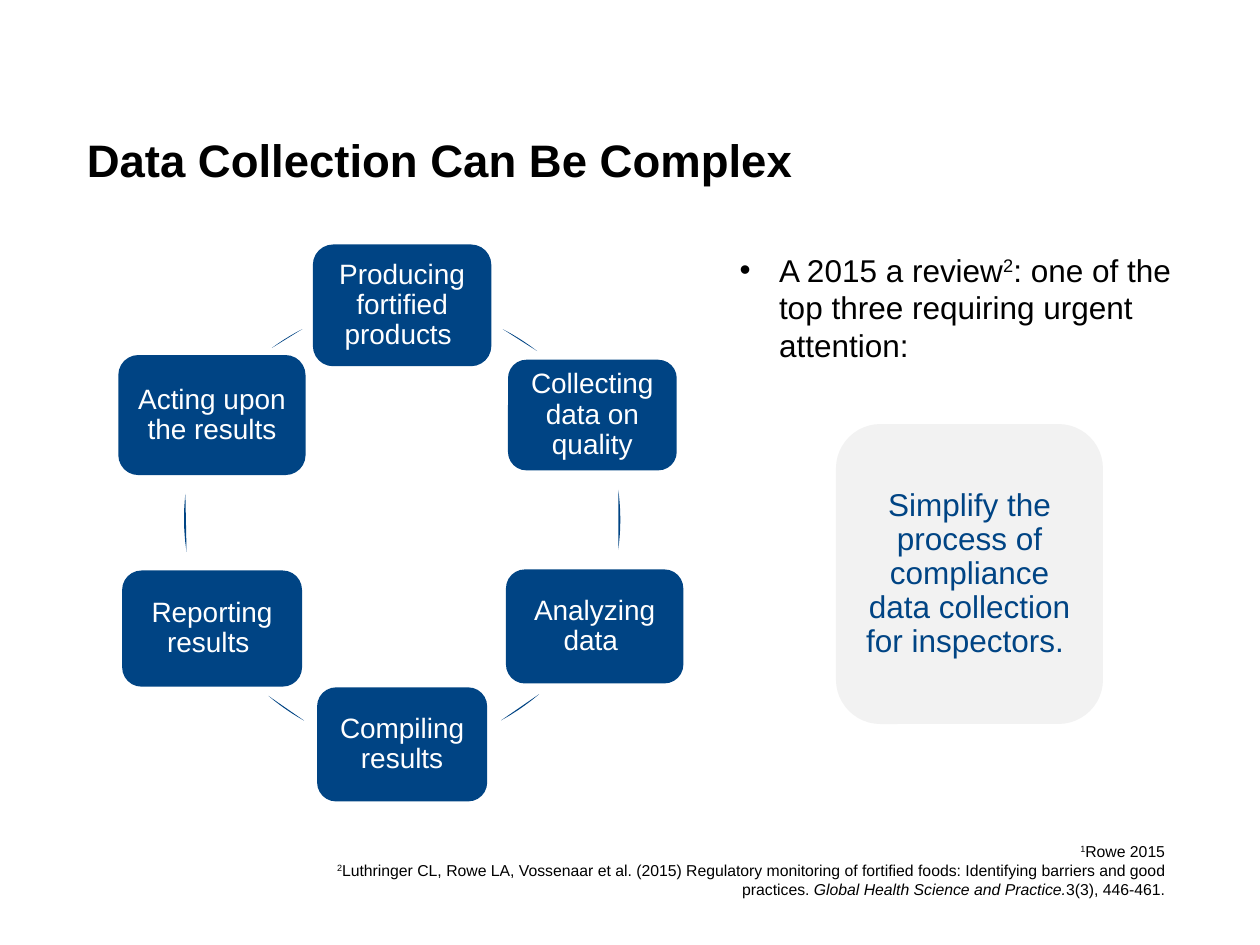
from math import cos, radians, sin

from lxml import etree
from pptx import Presentation
from pptx.dml.color import RGBColor
from pptx.enum.shapes import MSO_SHAPE
from pptx.enum.text import MSO_ANCHOR, PP_ALIGN
from pptx.oxml.ns import qn
from pptx.util import Pt

NAVY = RGBColor(0x00, 0x44, 0x84)
PALE = RGBColor(0xF2, 0xF2, 0xF2)
BLACK = RGBColor(0x00, 0x00, 0x00)
WHITE = RGBColor(0xFF, 0xFF, 0xFF)
ROUNDED = MSO_SHAPE.ROUNDED_RECTANGLE
MIDDLE = MSO_ANCHOR.MIDDLE
TOP = MSO_ANCHOR.TOP
CENTER = PP_ALIGN.CENTER
RIGHT = PP_ALIGN.RIGHT

ARC_RADIUS = 125.6
ARC_STEPS = 12
STEPS = [
    ("Producing fortified products ", (111.8, 0.7, 102, 69.6)),
    ("Collecting data on quality", (223.3, 66.6, 96.4, 63.2)),
    ("Analyzing data ", (222.1, 186.4, 101.4, 65.2)),
    ("Compiling results", (114.2, 253.8, 97.2, 65.2)),
    ("Reporting results ", (2.8, 187, 102.8, 66.4)),
    ("Acting upon the results", (0.6, 63.9, 107, 68.6)),
]
ARCS = [
    ((163, 160.9), -62.8, -52.2),
    ((161.9, 158), -7.8, 7.8),
    ((159.4, 162.3), 49.4, 61.5),
    ((167.8, 163), 119, 130.4),
    ((163.8, 157.3), 171.3, 186.4),
    ((163, 160.9), 233.6, 242.9),
]


def set_all(target, values):
    for name, value in values.items():
        setattr(target, name, value)


def prepare_frame(shape, anchor, inset_x, inset_y):
    set_all(shape.text_frame, {
        "word_wrap": True,
        "vertical_anchor": anchor,
        "margin_left": Pt(inset_x),
        "margin_right": Pt(inset_x),
        "margin_top": Pt(inset_y),
        "margin_bottom": Pt(inset_y),
    })
    return shape.text_frame


def add_spans(para, spans, size, color):
    for text, style in spans:
        span = para.add_run()
        span.text = text
        set_all(span.font, {"name": "Arial", "size": Pt(size),
                            "bold": style == "bold", "italic": style == "italic"})
        span.font.color.rgb = color
        if style == "super":
            span.font._element.set("baseline", "30000")


def paint(shape, color):
    shape.shadow.inherit = False
    shape.fill.solid()
    shape.fill.fore_color.rgb = color
    shape.line.fill.background()


def add_text_box(page, box, anchor=TOP):
    shape = page.shapes.add_textbox(*map(Pt, box))
    return prepare_frame(shape, anchor, 7.2, 3.6)


def add_card(page, box, text, size, fill, color, inset):
    card = page.shapes.add_shape(ROUNDED, *map(Pt, box))
    paint(card, fill)
    para = prepare_frame(card, MIDDLE, inset, inset).paragraphs[0]
    set_all(para, {"alignment": CENTER, "line_spacing": 0.9})
    add_spans(para, [(text, None)], size, color)


def add_arc(page, center_x, center_y, start, end):
    points = []
    for step in range(ARC_STEPS + 1):
        angle = radians(start + (end - start) * step / ARC_STEPS)
        points.append((Pt(center_x + ARC_RADIUS * cos(angle)),
                       Pt(center_y + ARC_RADIUS * sin(angle))))
    builder = page.shapes.build_freeform(Pt(center_x - ARC_RADIUS),
                                         Pt(center_y - ARC_RADIUS))
    builder.move_to(*points[0])
    builder.add_line_segments(points[1:], close=False)
    builder.move_to(Pt(center_x + ARC_RADIUS), Pt(center_y + ARC_RADIUS))
    arc = builder.convert_to_shape()
    first_corner, _, last_corner = list(arc._element.iter(qn("a:moveTo")))
    for corner in (first_corner, last_corner):
        corner.getparent().remove(corner)
    paint(arc, NAVY)


def add_title(page, box):
    para = add_text_box(page, box, MIDDLE).paragraphs[0]
    para.line_spacing = 0.9
    add_spans(para, [("Data Collection Can Be Complex", "bold")], 26, BLACK)


def add_cycle(page, left, top):
    for (center_x, center_y), start, end in ARCS:
        add_arc(page, left + center_x, top + center_y, start, end)
    for text, (x, y, width, height) in STEPS:
        add_card(page, (left + x, top + y, width, height), text, 16, NAVY, WHITE, 4.8)


def add_review(page, left, top, width):
    para = add_text_box(page, (left, top, width, 94.3)).paragraphs[0]
    properties = para._p.get_or_add_pPr()
    properties.set("marL", str(Pt(22.5)))
    properties.set("indent", str(-Pt(22.5)))
    etree.SubElement(properties, qn("a:buFont")).set("typeface", "Arial")
    etree.SubElement(properties, qn("a:buChar")).set("char", "•")
    add_spans(para, [
        ("A 2015 a review", None),
        ("2", "super"),
        (": one of the top three requiring urgent attention:", None),
    ], 18, BLACK)
    add_card(page, (left + 62.1, top + 102.6, 152.6, 171.4),
             "Simplify the process of compliance data collection for inspectors. ",
             18, PALE, NAVY, 6.5)


def add_references(page, box):
    frame = add_text_box(page, box)
    references = [
        [("1", "super"), ("Rowe 2015", None)],
        [("2", "super"),
         ("Luthringer CL, Rowe LA, Vossenaar et al. (2015) Regulatory monitoring of "
          "fortified foods: Identifying barriers and good practices. ", None),
         ("Global Health Science and Practice.", "italic"),
         ("3(3), 446-461.", None)],
    ]
    for index, spans in enumerate(references):
        para = frame.add_paragraph() if index else frame.paragraphs[0]
        para.alignment = RIGHT
        add_spans(para, spans, 9, BLACK)


def main():
    deck = Presentation()
    set_all(deck, {"slide_width": Pt(720), "slide_height": Pt(540)})
    page = deck.slides.add_slide(deck.slide_layouts[6])
    add_title(page, (42.5, 41, 620.6, 104.4))
    add_cycle(page, 67, 139)
    add_references(page, (163.8, 477.4, 509, 51.1))
    add_review(page, 415.6, 139.7, 283.7)
    deck.save("out.pptx")


if __name__ == "__main__":
    main()
